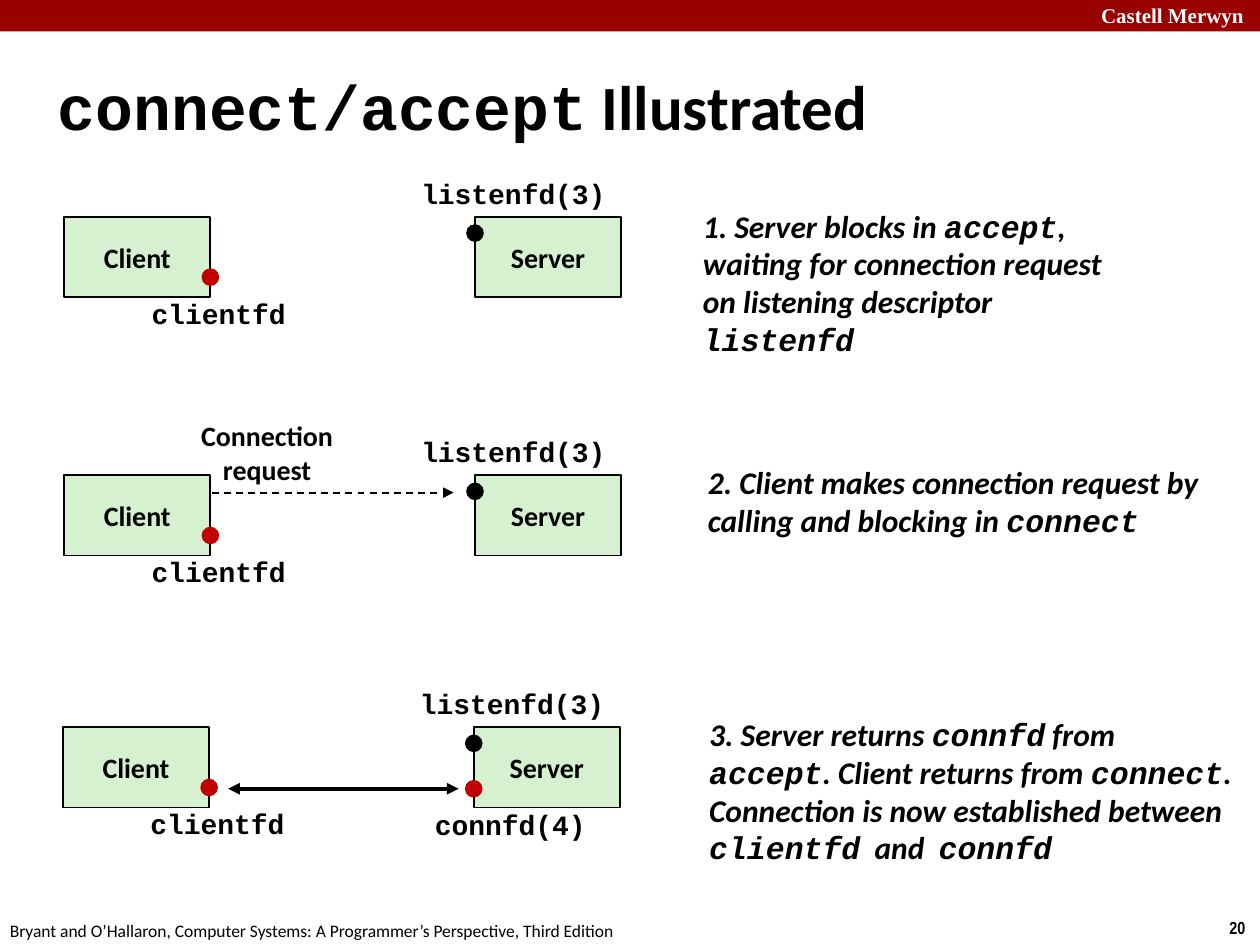
from dataclasses import dataclass

from lxml.etree import SubElement
from pptx import Presentation
from pptx.dml.color import RGBColor
from pptx.enum.dml import MSO_LINE_DASH_STYLE as Dash
from pptx.enum.shapes import MSO_CONNECTOR as Connector, MSO_SHAPE as Shape
from pptx.enum.text import MSO_ANCHOR as Anchor, PP_ALIGN as Align
from pptx.oxml.ns import qn
from pptx.util import Inches, Pt


@dataclass(frozen=True)
class Theme:
    """Colours, fonts and type sizes of the slide."""
    black: RGBColor = RGBColor(0x00, 0x00, 0x00)
    white: RGBColor = RGBColor(0xFF, 0xFF, 0xFF)
    banner: RGBColor = RGBColor(0x99, 0x00, 0x00)
    host: RGBColor = RGBColor(0xD5, 0xF1, 0xCF)
    active: RGBColor = RGBColor(0xC0, 0x00, 0x00)
    sans: str = "Calibri"
    code: str = "Courier New"
    serif: str = "Times New Roman"
    narrow: str = "Arial Narrow"
    title_size: int = 36
    note_size: int = 18
    label_size: int = 16
    banner_size: int = 12
    footer_size: int = 10


THEME = Theme()
HOST_WIDTH, HOST_HEIGHT = 1.16, 0.64
SERVER_OFFSET = 3.26
DOT = 0.14


def style_font(font, name, size, color=THEME.black, bold=True, italic=False):
    """Give a font its face, size, colour and weight."""
    font.name, font.size = name, Pt(size)
    font.bold, font.italic = bold, italic
    font.color.rgb = color


def write_mixed(paragraph, text, size, italic=False):
    """Write text whose backquoted parts are set in the code font."""
    for index, part in enumerate(text.split("`")):
        if part:
            run = paragraph.add_run()
            run.text = part
            face = THEME.code if index % 2 else THEME.sans
            style_font(run.font, face, size, italic=italic)


def add_text(slide, box, text, face, size, align=Align.CENTER, anchor=Anchor.MIDDLE,
             wrap=False, **look):
    """Add a text box in one font."""
    frame = slide.shapes.add_textbox(*map(Inches, box)).text_frame
    frame.word_wrap = wrap
    frame.vertical_anchor = anchor
    frame.text = text
    for paragraph in frame.paragraphs:
        paragraph.alignment = align
        for run in paragraph.runs:
            style_font(run.font, face, size, **look)


def add_filled(slide, kind, box, color):
    """Add a plain filled shape without outline or shadow."""
    shape = slide.shapes.add_shape(kind, *map(Inches, box))
    shape.shadow.inherit = False
    shape.fill.solid()
    shape.fill.fore_color.rgb = color
    shape.line.fill.background()
    return shape


def add_host(slide, left, top, name):
    """Add a client or server box."""
    host = add_filled(slide, Shape.RECTANGLE, (left, top, HOST_WIDTH, HOST_HEIGHT), THEME.host)
    host.line.color.rgb = THEME.black
    host.line.width = Pt(1)
    frame = host.text_frame
    frame.word_wrap = False
    frame.vertical_anchor = Anchor.MIDDLE
    frame.text = name
    frame.paragraphs[0].alignment = Align.CENTER
    style_font(frame.paragraphs[0].runs[0].font, THEME.sans, THEME.label_size)


def add_descriptor(slide, x, top, color):
    """Add a descriptor dot centred on a host's edge."""
    add_filled(slide, Shape.OVAL, (x - DOT / 2, top, DOT, DOT), color)


def add_arrow(slide, start, end, y, width, dash=None, both_ends=False):
    """Add a horizontal arrow with triangular heads."""
    arrow = slide.shapes.add_connector(
        Connector.STRAIGHT, Inches(start), Inches(y), Inches(end), Inches(y))
    arrow.line.color.rgb = THEME.black
    arrow.line.width = Pt(width)
    if dash:
        arrow.line.dash_style = dash
    outline = arrow.line._get_or_add_ln()
    for end_tag in (["a:headEnd"] if both_ends else []) + ["a:tailEnd"]:
        SubElement(outline, qn(end_tag), type="triangle")
    SubElement(arrow._element.spPr, qn("a:effectLst"))


def add_stage(slide, left, top):
    """Draw client and server with the descriptors every stage shows."""
    server = left + SERVER_OFFSET
    add_host(slide, left, top, "Client")
    add_host(slide, server, top, "Server")
    for text, x, y, width in (("listenfd(3)", 2.73, -0.37, 1.67), ("clientfd", 0.59, 0.58, 1.27)):
        add_text(slide, (left + x, top + y, width, 0.37), text, THEME.code, THEME.label_size)
    add_descriptor(slide, left + HOST_WIDTH, top + 0.41, THEME.active)
    add_descriptor(slide, server, top + 0.06, THEME.black)


def add_request(slide, left, top):
    """Draw the connection request between the hosts."""
    add_arrow(slide, left + 1.17, left + 3.09, top + 0.14, 1, Dash.DASH)
    add_text(slide, (left + 0.98, top - 0.5, 1.26, 0.64), "Connection\nrequest",
             THEME.sans, THEME.label_size)


def add_connection(slide, left, top):
    """Draw the established connection and its server descriptor."""
    add_arrow(slide, left + 1.31, left + 3.14, top + 0.49, 2.25, both_ends=True)
    add_text(slide, (left + 2.85, top + 0.59, 1.4, 0.37), "connfd(4)",
             THEME.code, THEME.label_size)
    add_descriptor(slide, left + SERVER_OFFSET, top + 0.42, THEME.active)


def add_note(slide, box, text):
    """Add the explanation beside a stage."""
    frame = slide.shapes.add_textbox(*map(Inches, box)).text_frame
    frame.word_wrap = True
    frame.vertical_anchor = Anchor.MIDDLE
    write_mixed(frame.paragraphs[0], text, THEME.note_size, italic=True)


def add_frame(slide):
    """Add the banner, source line and slide number."""
    add_filled(slide, Shape.RECTANGLE, (0, 0, 10, 0.25), THEME.banner)
    add_text(slide, (8.64, -0.03, 1.43, 0.3), "Castell Merwyn", THEME.serif, THEME.banner_size,
             Align.LEFT, Anchor.TOP, wrap=True, color=THEME.white)
    add_text(slide, (9.66, 7.23, 0.34, 0.27), "20", THEME.narrow, THEME.footer_size,
             Align.LEFT, Anchor.TOP)
    add_text(slide, (-0.02, 7.25, 5.08, 0.27),
             "Bryant and O’Hallaron, Computer Systems: A Programmer’s Perspective, Third Edition",
             THEME.sans, THEME.footer_size, Align.LEFT, Anchor.TOP, bold=False)


def add_title(slide, box, text):
    """Move the title placeholder into its box and write it."""
    title = slide.shapes.title
    title.left, title.top, title.width, title.height = map(Inches, box)
    title.text_frame.vertical_anchor = Anchor.MIDDLE
    heading = title.text_frame.paragraphs[0]
    heading.alignment = Align.LEFT
    properties = heading._p.get_or_add_pPr()
    properties.set("marL", str(Inches(0.13)))
    properties.set("indent", str(Inches(-0.13)))
    write_mixed(heading, text, THEME.title_size)


def main():
    """Build and save the slide."""
    deck = Presentation()
    deck.slide_width, deck.slide_height = Inches(10), Inches(7.5)
    slide = deck.slides.add_slide(deck.slide_layouts[5])
    add_frame(slide)
    add_title(slide, (0.36, 0.52, 9.17, 0.63), "`connect/accept` Illustrated")
    stages = (
        (0.51, 1.72, None, (5.48, 1.59, 3.6, 1.3),
         "1. Server blocks in `accept`, waiting for connection request "
         "on listening descriptor `listenfd`"),
        (0.51, 3.77, add_request, (5.52, 3.62, 4.23, 0.71),
         "2. Client makes connection request by calling and blocking in `connect`"),
        (0.5, 5.77, add_connection, (5.53, 5.62, 4.39, 1.31),
         "3. Server returns `connfd` from `accept`. Client returns from `connect`. "
         "Connection is now established between `clientfd`  and  `connfd`"),
    )
    for left, top, add_exchange, note_box, note in stages:
        add_stage(slide, left, top)
        if add_exchange:
            add_exchange(slide, left, top)
        add_note(slide, note_box, note)
    deck.save("out.pptx")


if __name__ == "__main__":
    main()
